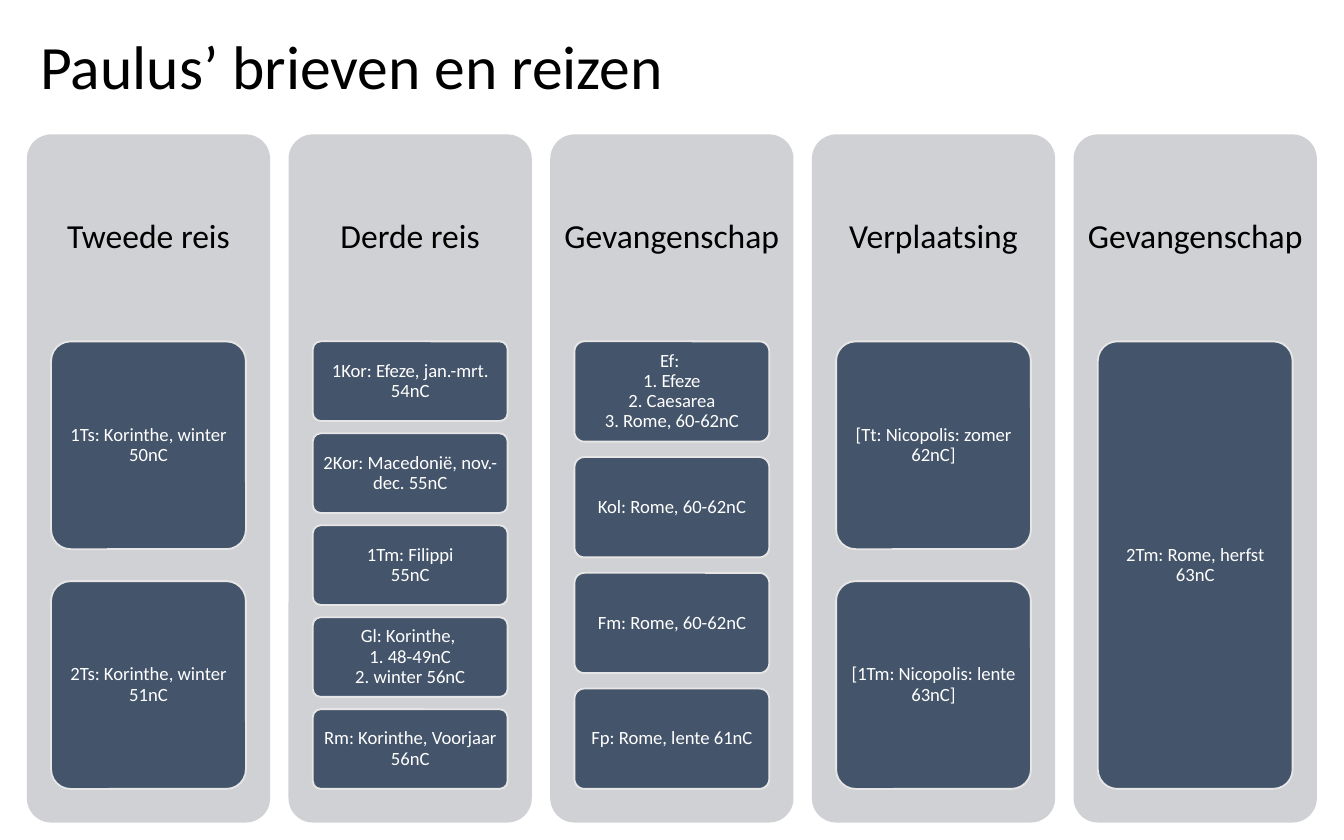
from pptx import Presentation
from pptx.dml.color import RGBColor
from pptx.enum.shapes import MSO_SHAPE as Preset
from pptx.enum.text import MSO_ANCHOR as Anchor, MSO_AUTO_SIZE as AutoSize, PP_ALIGN as Align
from pptx.util import Inches, Pt

BLACK = RGBColor(0x00, 0x00, 0x00)
WHITE = RGBColor(0xFF, 0xFF, 0xFF)
COLUMN_GRAY = RGBColor(0xCF, 0xD1, 0xD4)
CARD_BLUE = RGBColor(0x44, 0x54, 0x6A)
CARD_EDGE = RGBColor(0xE7, 0xE6, 0xE6)

# Column grid, in inches
LEFT, TOP, WIDTH, HEIGHT, PITCH = 0.2, 1, 1.81, 5.12, 1.947
HEADER_HEIGHT = 1.54
CARD_INDENT, CARD_WIDTH = 0.18, 1.45
STACK_TOP, STACK_HEIGHT = 2.54, 3.33
GAP_RATIO = 0.154  # gap between cards as a share of the card height

COLUMNS = [
    ("Tweede reis", ["1Ts: Korinthe, winter 50nC", "2Ts: Korinthe, winter 51nC"]),
    ("Derde reis", [
        "1Kor: Efeze, jan.-mrt. 54nC",
        "2Kor: Macedonië, nov.-dec. 55nC",
        "1Tm: Filippi\n55nC",
        "Gl: Korinthe, \n1. 48-49nC\n2. winter 56nC",
        "Rm: Korinthe, Voorjaar 56nC",
    ]),
    ("Gevangenschap", [
        "Ef: \n1. Efeze\n2. Caesarea\n3. Rome, 60-62nC",
        "Kol: Rome, 60-62nC",
        "Fm: Rome, 60-62nC",
        "Fp: Rome, lente 61nC",
    ]),
    ("Verplaatsing", ["[Tt: Nicopolis: zomer 62nC]", "[1Tm: Nicopolis: lente 63nC]"]),
    ("Gevangenschap", ["2Tm: Rome, herfst 63nC"]),
]


def write_text(shape, text, size, color, align, margin_x, margin_y):
    frame = shape.text_frame
    frame_format = {
        "word_wrap": True, "auto_size": AutoSize.NONE, "vertical_anchor": Anchor.MIDDLE,
        "margin_left": Inches(margin_x), "margin_right": Inches(margin_x),
        "margin_top": Inches(margin_y), "margin_bottom": Inches(margin_y),
    }
    for name, value in frame_format.items():
        setattr(frame, name, value)
    paragraph = frame.paragraphs[0]
    paragraph.text = text
    paragraph.alignment = align
    paragraph.line_spacing = 0.9
    for run in paragraph.runs:
        for name, value in {"name": "Calibri", "size": Pt(size), "bold": False}.items():
            setattr(run.font, name, value)
        run.font.color.rgb = color


def add_rounded(left, top, width, height, fill):
    shape = slide.shapes.add_shape(
        Preset.ROUNDED_RECTANGLE, Inches(left), Inches(top), Inches(width), Inches(height))
    shape.adjustments[0] = 0.1
    shape.shadow.inherit = False
    shape.fill.solid()
    shape.fill.fore_color.rgb = fill
    shape.line.fill.background()
    return shape


presentation = Presentation()
presentation.slide_width, presentation.slide_height = Inches(10), Inches(6.25)
slide = presentation.slides.add_slide(presentation.slide_layouts[5])

# Title
title = slide.shapes.title
title_place = {"left": 0.2, "top": 0.03, "width": 9.3, "height": 0.97}
for name, value in title_place.items():
    setattr(title, name, Inches(value))
write_text(title, "Paulus’ brieven en reizen", 33, BLACK, Align.LEFT, 0.1, 0.05)

for index, (heading, letters) in enumerate(COLUMNS):
    # Column with its heading
    left = LEFT + index * PITCH
    add_rounded(left, TOP, WIDTH, HEIGHT, COLUMN_GRAY)
    header = slide.shapes.add_textbox(
        Inches(left), Inches(TOP), Inches(WIDTH), Inches(HEADER_HEIGHT))
    write_text(header, heading, 18, BLACK, Align.CENTER, 0.07, 0.07)

    # Letter cards share the stack height evenly
    count = len(letters)
    card_height = STACK_HEIGHT / (count + GAP_RATIO * (count - 1))
    for row, letter in enumerate(letters):
        card_top = STACK_TOP + row * card_height * (1 + GAP_RATIO)
        card = add_rounded(left + CARD_INDENT, card_top, CARD_WIDTH, card_height, CARD_BLUE)
        card.line.color.rgb = CARD_EDGE
        card.line.width = Pt(1)
        write_text(card, letter, 10, WHITE, Align.CENTER, 0.03, 0.02)

presentation.save("out.pptx")
